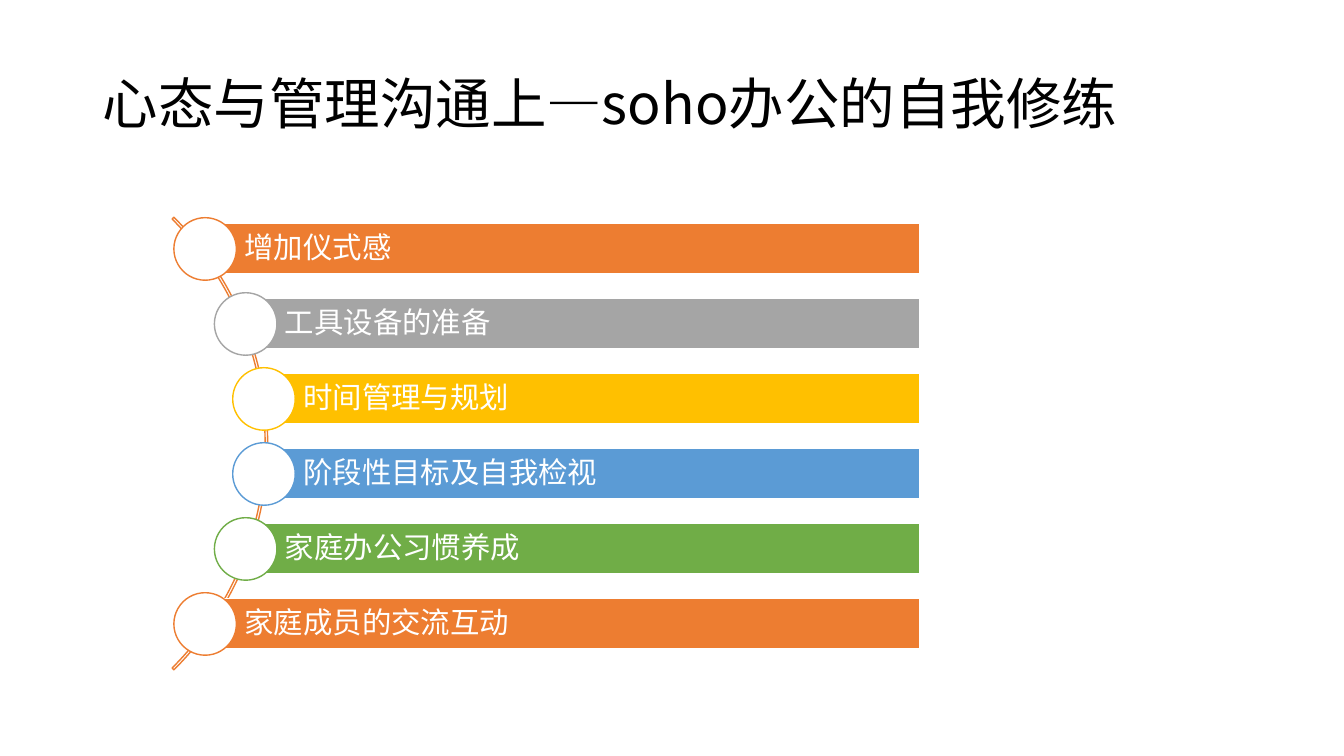
import math

import pptx
import pptx.util
import pptx.dml.color
from lxml import etree
from pptx.enum.shapes import MSO_SHAPE
from pptx.enum.text import MSO_ANCHOR, PP_ALIGN
from pptx.oxml.ns import qn

Inches = pptx.util.Inches
Pt = pptx.util.Pt
RGBColor = pptx.dml.color.RGBColor

FONT = "Noto Sans CJK SC"
BLACK = RGBColor(0x00, 0x00, 0x00)
WHITE = RGBColor(0xFF, 0xFF, 0xFF)
ORANGE = RGBColor(0xED, 0x7D, 0x31)
GREY = RGBColor(0xA5, 0xA5, 0xA5)
GOLD = RGBColor(0xFF, 0xC0, 0x00)
BLUE = RGBColor(0x5B, 0x9B, 0xD5)
GREEN = RGBColor(0x70, 0xAD, 0x47)

TITLE = "心态与管理沟通上—soho办公的自我修练"
HABITS = [
    ("增加仪式感", ORANGE),
    ("工具设备的准备", GREY),
    ("时间管理与规划", GOLD),
    ("阶段性目标及自我检视", BLUE),
    ("家庭办公习惯养成", GREEN),
    ("家庭成员的交流互动", ORANGE),
]

# Geometry in inches: the circles sit on a curve around one centre
CENTRE_X, CENTRE_Y = -0.52, 4.4
ARC_SIZE = 6.35
CURVE_RADIUS = 3.16
FIRST_Y, LAST_Y = 2.47, 6.19
BAR_HEIGHT, BAR_RIGHT = 0.5, 9.12
CIRCLE_SIZE = 0.62


class SlideBuilder:
    def __init__(self, presentation):
        title_only = presentation.slide_layouts[5]
        self.slide = presentation.slides.add_slide(title_only)

    def set_text(self, frame, text, size, color, insets):
        frame.word_wrap = True
        frame.vertical_anchor = MSO_ANCHOR.MIDDLE
        (frame.margin_left, frame.margin_top,
         frame.margin_right, frame.margin_bottom) = map(Inches, insets)
        paragraph = frame.paragraphs[0]
        paragraph.text = text
        paragraph.alignment = PP_ALIGN.LEFT
        paragraph.line_spacing = 0.9
        paragraph.font.size = Pt(size)
        paragraph.font.color.rgb = color
        paragraph.font.name = FONT
        # East Asian typeface
        run_properties = paragraph.runs[0]._r.get_or_add_rPr()
        etree.SubElement(run_properties, qn("a:ea"), typeface=FONT)

    def title(self, text, left, top, width, height):
        heading = self.slide.shapes.title
        heading.left, heading.top = Inches(left), Inches(top)
        heading.width, heading.height = Inches(width), Inches(height)
        self.set_text(heading.text_frame, text, 39.6, BLACK,
                      (0.1, 0.05, 0.1, 0.19))

    def shape(self, kind, left, top, width, height, line, fill=None):
        shape = self.slide.shapes.add_shape(
            kind, Inches(left), Inches(top), Inches(width), Inches(height))
        shape.shadow.inherit = False
        if fill is None:
            shape.fill.background()
        else:
            shape.fill.solid()
            shape.fill.fore_color.rgb = fill
        shape.line.color.rgb = line
        shape.line.width = Pt(1)
        return shape

    def arc(self, centre_x, centre_y, size):
        arc = self.shape(MSO_SHAPE.BLOCK_ARC, centre_x - size / 2,
                         centre_y - size / 2, size, size, ORANGE)
        for index, value in enumerate((189, 27, 0.004)):
            arc.adjustments[index] = value

    def bar(self, text, left, middle, color):
        bar = self.shape(MSO_SHAPE.RECTANGLE, left, middle - BAR_HEIGHT / 2,
                         BAR_RIGHT - left, BAR_HEIGHT, WHITE, color)
        self.set_text(bar.text_frame, text, 21, WHITE,
                      (0.39, 0.06, 0.06, 0.06))

    def circle(self, centre_x, centre_y, color):
        self.shape(MSO_SHAPE.OVAL, centre_x - CIRCLE_SIZE / 2,
                   centre_y - CIRCLE_SIZE / 2, CIRCLE_SIZE, CIRCLE_SIZE,
                   color, WHITE)


def main():
    presentation = pptx.Presentation()
    presentation.slide_width = Inches(13.33)
    presentation.slide_height = Inches(7.5)
    builder = SlideBuilder(presentation)

    # Title
    builder.title(TITLE, 0.92, 0.4, 11.5, 1.45)

    # Curve behind the list
    builder.arc(CENTRE_X, CENTRE_Y, ARC_SIZE)

    # Habits: a bar and a circle each, following the curve
    pitch = (LAST_Y - FIRST_Y) / (len(HABITS) - 1)
    middle_y = (FIRST_Y + LAST_Y) / 2
    for index, (habit, color) in enumerate(HABITS):
        y = FIRST_Y + index * pitch
        x = CENTRE_X + math.sqrt(CURVE_RADIUS ** 2 - (y - middle_y) ** 2)
        builder.bar(habit, x, y, color)
        builder.circle(x, y, color)

    presentation.save("out.pptx")


if __name__ == "__main__":
    main()
